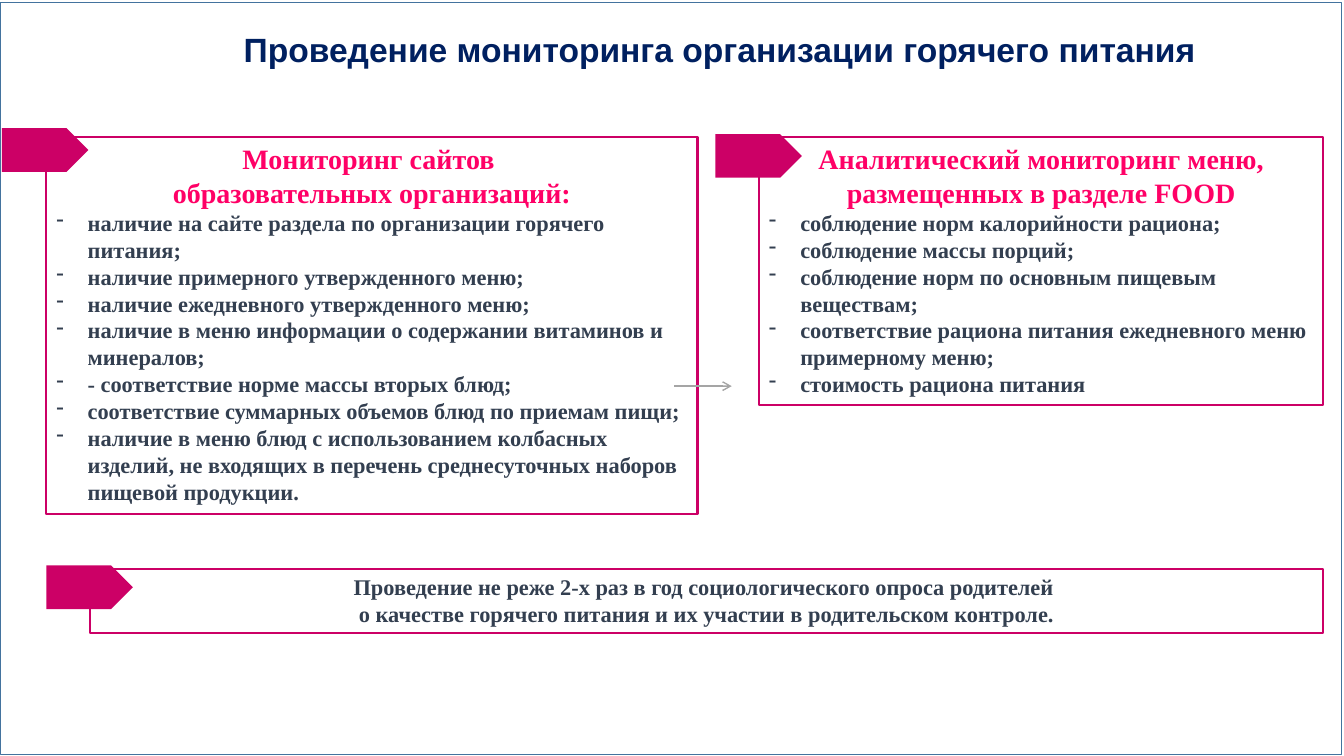
from lxml.etree import SubElement
from pptx import Presentation
from pptx.dml.color import RGBColor
from pptx.enum.shapes import MSO_CONNECTOR as Connector, MSO_SHAPE as Shape
from pptx.enum.text import MSO_ANCHOR as Anchor, MSO_AUTO_SIZE as AutoSize, PP_ALIGN as Align
from pptx.oxml.ns import qn
from pptx.util import Cm, Pt

COLOURS = {
    "frame": "43739E",
    "title": "002060",
    "accent": "CC0066",
    "heading": "FF0066",
    "body": "333F50",
    "arrow": "A5A5A5",
}
SERIF = "Times New Roman"

SITE_HEADING = ["Мониторинг сайтов ", "образовательных организаций:"]
SITE_CHECKS = [
    "наличие на сайте раздела по организации горячего питания;",
    "наличие примерного утвержденного меню;",
    "наличие ежедневного утвержденного меню;",
    "наличие в меню информации о содержании витаминов и минералов;",
    "- соответствие норме массы вторых блюд;",
    "соответствие суммарных объемов блюд по приемам пищи;",
    "наличие в меню блюд с использованием колбасных изделий, не входящих "
    "в перечень среднесуточных наборов пищевой продукции.",
]
MENU_HEADING = ["Аналитический мониторинг меню, размещенных в разделе FOOD"]
MENU_CHECKS = [
    "соблюдение норм калорийности рациона;",
    "соблюдение массы порций;",
    "соблюдение норм по основным пищевым веществам;",
    "соответствие рациона питания ежедневного меню примерному меню;",
    "стоимость рациона питания",
]
SURVEY = [
    "Проведение не реже 2-х раз в год социологического опроса родителей ",
    "о качестве горячего питания и их участии в родительском контроле.",
]


def colour(name):
    return RGBColor.from_string(COLOURS[name])


def write(para, text, size=16, ink="body", font=SERIF, align=Align.CENTER):
    para.alignment = align
    span = para.add_run()
    span.text = text
    span.font.name = font
    span.font.size = Pt(size)
    span.font.bold = True
    span.font.color.rgb = colour(ink)


def add_dash(para):
    """Give the paragraph a hanging dash bullet."""
    props = para._p.get_or_add_pPr()
    props.set("marL", str(Cm(0.79)))
    props.set("indent", str(-Cm(0.79)))
    SubElement(props, qn("a:buFontTx"))
    SubElement(props, qn("a:buChar"), char="-")


def add_outline(page, left, top, width, height, ink="accent", weight=1.5):
    box = page.shapes.add_shape(Shape.RECTANGLE, Cm(left), Cm(top), Cm(width), Cm(height))
    box.shadow.inherit = False
    box.fill.background()
    box.line.color.rgb = colour(ink)
    box.line.width = Pt(weight)
    return box


def add_tag(page, left, top):
    tag = page.shapes.add_shape(Shape.PENTAGON, Cm(left), Cm(top), Cm(2.18), Cm(1.1))
    tag.shadow.inherit = False
    tag.fill.solid()
    tag.fill.fore_color.rgb = colour("accent")
    tag.line.fill.background()


def add_card(page, area, tag_at, heading=(), checks=(), lines=()):
    """Add an outlined text box with a pointed tag over its corner."""
    frame = add_outline(page, *area).text_frame
    frame.word_wrap = True
    frame.vertical_anchor = Anchor.TOP
    frame.auto_size = AutoSize.SHAPE_TO_FIT_TEXT
    entries = [(text, {"size": 20, "ink": "heading"}) for text in heading]
    entries += [(text, {"align": Align.LEFT}) for text in checks]
    entries += [(text, {}) for text in lines]
    for index, (text, style) in enumerate(entries):
        para = frame.add_paragraph() if index else frame.paragraphs[0]
        if text in checks:
            add_dash(para)
        write(para, text, **style)
    add_tag(page, *tag_at)


def add_arrow(page, left, right, level):
    arrow = page.shapes.add_connector(
        Connector.STRAIGHT, Cm(left), Cm(level), Cm(right), Cm(level))
    arrow.line.color.rgb = colour("arrow")
    arrow.line.width = Pt(1)
    SubElement(arrow.line._get_or_add_ln(), qn("a:tailEnd"), type="arrow")
    SubElement(arrow._element.spPr, qn("a:effectLst"))


def set_title(page, text):
    title = page.shapes.title
    title.left, title.top, title.width, title.height = Cm(3.2), Cm(0.15), Cm(29.87), Cm(2.31)
    frame = title.text_frame
    frame.word_wrap = True
    frame.vertical_anchor = Anchor.MIDDLE
    frame.margin_left = frame.margin_right = Cm(0.1)
    frame.margin_top = frame.margin_bottom = Cm(0.1)
    para = frame.paragraphs[0]
    para.line_spacing = 0.9
    write(para, text, size=24, ink="title", font="Arial")


def main():
    deck = Presentation()
    deck.slide_width, deck.slide_height = Cm(33.87), Cm(19.05)
    page = deck.slides.add_slide(deck.slide_layouts[5])
    add_outline(page, 0, 0.05, 33.81, 18.95, ink="frame", weight=0.25)
    set_title(page, "Проведение мониторинга организации горячего питания")
    add_card(page, (1.17, 3.45, 16.41, 9.5), (0.05, 3.23),
             heading=SITE_HEADING, checks=SITE_CHECKS)
    add_card(page, (19.13, 3.45, 14.22, 6.76), (18.03, 3.38),
             heading=MENU_HEADING, checks=MENU_CHECKS)
    add_arrow(page, 16.99, 18.44, 9.73)
    add_card(page, (2.26, 14.33, 31.09, 1.63), (1.17, 14.25), lines=SURVEY)
    deck.save("out.pptx")


if __name__ == "__main__":
    main()
